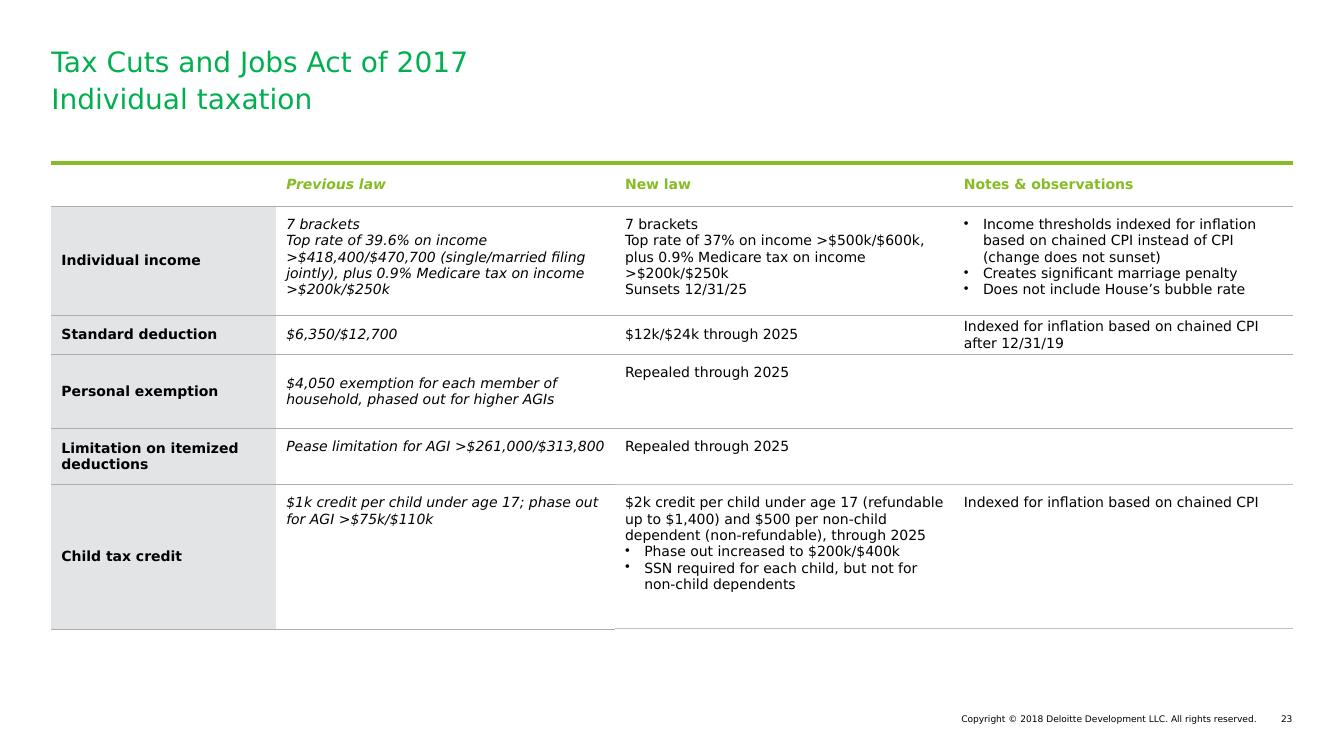
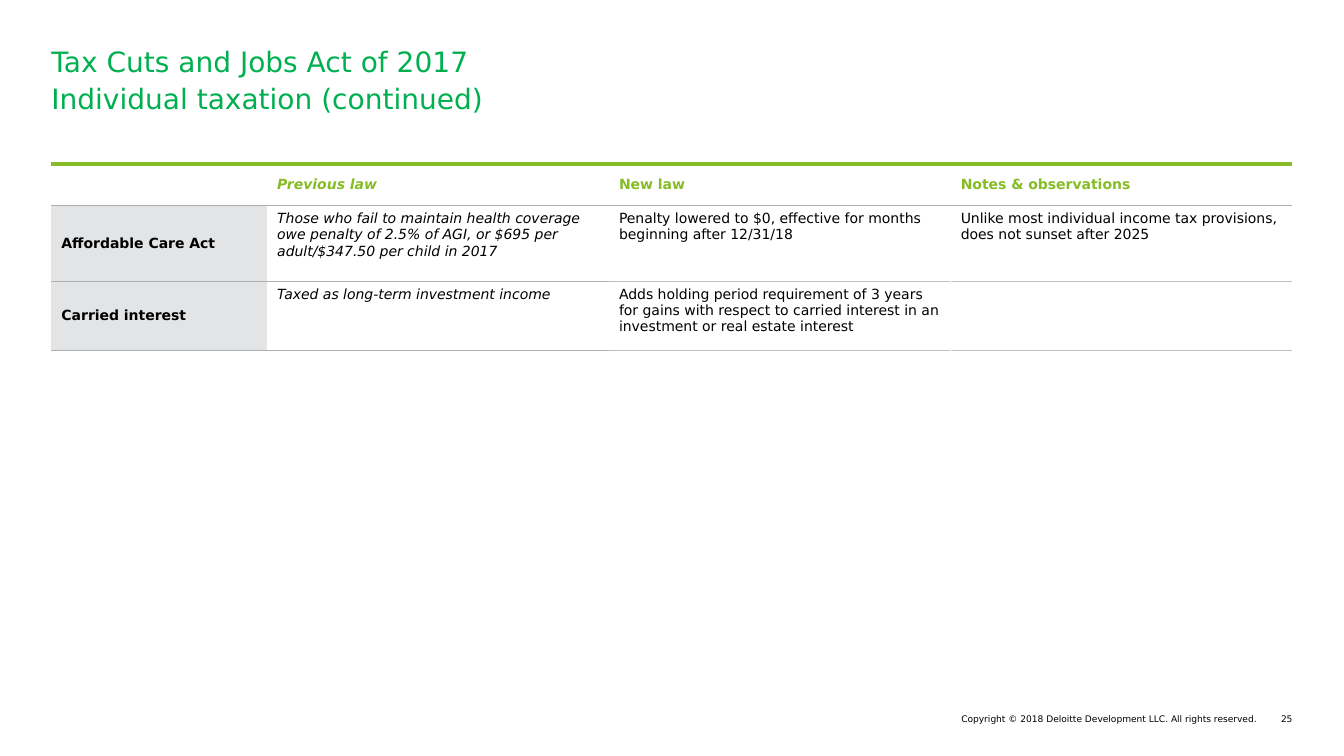
"""Build two slides that compare previous and new individual tax law."""
from dataclasses import dataclass

from lxml.etree import SubElement as Sub
from pptx import Presentation
from pptx.dml.color import RGBColor
from pptx.enum.text import MSO_ANCHOR as Anchor, MSO_AUTO_SIZE as Auto, PP_ALIGN as Align
from pptx.oxml.ns import qn
from pptx.util import Inches, Pt

BLACK = RGBColor(0x00, 0x00, 0x00)
WHITE = RGBColor(0xFF, 0xFF, 0xFF)
GREEN = RGBColor(0x00, 0xB0, 0x50)
LIME = RGBColor(0x86, 0xBC, 0x25)
PALE = RGBColor(0xE3, 0xE4, 0xE5)
GREY = RGBColor(0xAC, 0xAE, 0xB0)
SOFT = RGBColor(0xBF, 0xBF, 0xBF)

FONT = "DejaVu Sans"
LEFT, WIDTH = 0.51, 12.31
TITLE = "Tax Cuts and Jobs Act of 2017"
RIGHTS = "Copyright © 2018 Deloitte Development LLC. All rights reserved."
HEADS = ("", "Previous law", "New law", "Notes & observations")
PLAIN = "{2D5ABB26-0587-4C30-8999-92F81FD0307C}"


@dataclass
class Row:
    """One table row; the first mid cells are centred vertically."""
    high: float
    cells: tuple[str, ...]
    pad: float = 0.1
    mid: int = 1


@dataclass
class Page:
    """One slide with its comparison table."""
    name: str
    num: str
    top: float
    label: float
    rows: list[Row]
    split: bool = False


@dataclass
class Edge:
    """A cell border."""
    color: RGBColor
    width: float


PAGES = [
    Page("Individual taxation", "23", 1.62, 2.23, [
        Row(0.43, HEADS, mid=4),
        Row(1.08, (
            "Individual income",
            "7 brackets\vTop rate of 39.6% on income >$418,400/$470,700 (single/married "
            "filing jointly), plus 0.9% Medicare tax on income >$200k/$250k",
            "7 brackets\nTop rate of 37% on income >$500k/$600k, plus 0.9% Medicare tax "
            "on income >$200k/$250k\nSunsets 12/31/25",
            "•Income thresholds indexed for inflation based on chained CPI instead of CPI "
            "(change does not sunset)\n•Creates significant marriage penalty\n"
            "•Does not include House’s bubble rate")),
        Row(0.39, (
            "Standard deduction", "$6,350/$12,700", "$12k/$24k through 2025",
            "Indexed for inflation based on chained CPI after 12/31/19"), 0.02, 4),
        Row(0.73, (
            "Personal exemption",
            "$4,050 exemption for each member of household, phased out for higher AGIs",
            "Repealed through 2025", ""), mid=2),
        Row(0.56, (
            "Limitation on itemized deductions",
            "Pease limitation for AGI >$261,000/$313,800", "Repealed through 2025", "")),
        Row(1.43, (
            "Child tax credit",
            "$1k credit per child under age 17; phase out for AGI >$75k/$110k",
            "$2k credit per child under age 17 (refundable up to $1,400) and $500 per "
            "non-child dependent (non-refundable), through 2025\n"
            "•Phase out increased to $200k/$400k\n"
            "•SSN required for each child, but not for non-child dependents",
            "Indexed for inflation based on chained CPI")),
    ]),
    Page("Individual taxation (continued)", "25", 1.63, 2.14, [
        Row(0.41, HEADS, mid=4),
        Row(0.75, (
            "Affordable Care Act",
            "Those who fail to maintain health coverage owe penalty of 2.5% of AGI, or $695 "
            "per adult/$347.50 per child in 2017",
            "Penalty lowered to $0, effective for months beginning after 12/31/18",
            "Unlike most individual income tax provisions, does not sunset after 2025"), 0.05),
        Row(0.69, (
            "Carried interest", "Taxed as long-term investment income",
            "Adds holding period requirement of 3 years for gains with respect to carried "
            "interest in an investment or real estate interest", ""), 0.05),
    ], split=True),
]


def style(para, size: float, color: RGBColor, bold: bool = False, slant: bool = False) -> None:
    """Format every run of a paragraph."""
    for run in para.runs:
        font = run.font
        font.name, font.size = FONT, Pt(size)
        font.bold, font.italic = bold, slant
        font.color.rgb = color


def indent(para, mark: str = "") -> None:
    """Set or clear the bullet of a paragraph."""
    prop = para._p.get_or_add_pPr()
    step = Inches(0.19) if mark else 0
    prop.set("marL", str(step))
    prop.set("indent", str(-step))
    if mark:
        Sub(prop, qn("a:buChar")).set("char", mark)
    else:
        Sub(prop, qn("a:buNone"))


def trim(frame) -> None:
    """Remove the insets of a text frame and let it wrap."""
    frame.margin_left = frame.margin_right = frame.margin_top = frame.margin_bottom = 0
    frame.word_wrap = True
    frame.auto_size = Auto.NONE
    frame.vertical_anchor = Anchor.TOP


def head(shape, text: str, top: float, high: float) -> None:
    """Place and format a title or body placeholder."""
    shape.left, shape.top = Inches(LEFT), Inches(top)
    shape.width, shape.height = Inches(WIDTH), Inches(high)
    frame = shape.text_frame
    trim(frame)
    frame.text = text
    para = frame.paragraphs[0]
    indent(para)
    para.alignment = Align.LEFT
    para.space_before = Pt(0)
    style(para, 20, GREEN)


def foot(slide, text: str, left: float, wide: float) -> None:
    """Add one right-aligned footer text."""
    box = slide.shapes.add_textbox(Inches(left), Inches(7.08), Inches(wide), Inches(0.11))
    frame = box.text_frame
    trim(frame)
    frame.text = text
    frame.paragraphs[0].alignment = Align.RIGHT
    style(frame.paragraphs[0], 6.5, BLACK)


def rule(page: Page, line: int, col: int) -> Edge:
    """Return the border that lies above row number line."""
    if line == 0:
        return Edge(LIME, 3)
    if col > 1 and line >= len(page.rows) - 1:
        return Edge(SOFT, 0.75)
    return Edge(GREY, 0.5)


def border(cell, side: str, edge: Edge | None) -> None:
    """Draw or hide one side of a cell."""
    line = Sub(cell._tc.get_or_add_tcPr(), qn(f"a:ln{side}"))
    if edge is None:
        Sub(line, qn("a:noFill"))
        return
    line.set("w", str(Pt(edge.width)))
    Sub(Sub(line, qn("a:solidFill")), qn("a:srgbClr")).set("val", str(edge.color))


def write(cell, row: Row, line: int, col: int) -> None:
    """Fill a cell with its formatted text."""
    cell.margin_left = cell.margin_right = Inches(0.1)
    cell.margin_top = cell.margin_bottom = Inches(row.pad)
    cell.vertical_anchor = Anchor.MIDDLE if col < row.mid else Anchor.TOP
    text = row.cells[col]
    cell.text_frame.text = text
    for para in cell.text_frame.paragraphs:
        if para.text.startswith("•"):
            para.text = para.text[1:]
            indent(para, "•")
        style(para, 10, BLACK if line else LIME, line == 0 or col == 0, col == 1)
        if not text:
            Sub(para._p, qn("a:endParaRPr")).set("sz", "1000")


def grid(slide, page: Page) -> None:
    """Add the comparison table."""
    high = sum(row.high for row in page.rows)
    frame = slide.shapes.add_table(len(page.rows), len(HEADS), Inches(LEFT), Inches(page.top),
                                   Inches(WIDTH), Inches(high))
    table = frame.table
    table.first_row = table.horz_banding = False
    next(frame.element.iter(qn("a:tableStyleId"))).text = PLAIN
    rest = (WIDTH - page.label) / (len(HEADS) - 1)
    for col, item in enumerate(table.columns):
        item.width = Inches(rest if col else page.label)
    last = len(page.rows) - 1
    for line, row in enumerate(page.rows):
        table.rows[line].height = Inches(row.high)
        for col in range(len(HEADS)):
            cell = table.cell(line, col)
            write(cell, row, line, col)
            gap = Edge(WHITE, 1) if page.split and line == last else None
            border(cell, "L", gap if col == 3 else None)
            border(cell, "R", gap if col == 2 else None)
            border(cell, "T", rule(page, line, col))
            border(cell, "B", rule(page, line + 1, col))
            if line and col == 0:
                cell.fill.solid()
                cell.fill.fore_color.rgb = PALE
            else:
                cell.fill.background()


def build(deck, page: Page) -> None:
    """Add one complete slide."""
    slide = deck.slides.add_slide(deck.slide_layouts[1])
    foot(slide, RIGHTS, 6.61, 5.86)
    foot(slide, page.num, 12.48, 0.34)
    head(slide.placeholders[1], page.name, 0.81, 0.83)
    head(slide.shapes.title, TITLE, 0.44, 0.37)
    grid(slide, page)


def main() -> None:
    """Build and save the deck."""
    deck = Presentation()
    deck.slide_width, deck.slide_height = Inches(13.33), Inches(7.5)
    for page in PAGES:
        build(deck, page)
    deck.save("out.pptx")


if __name__ == "__main__":
    main()
